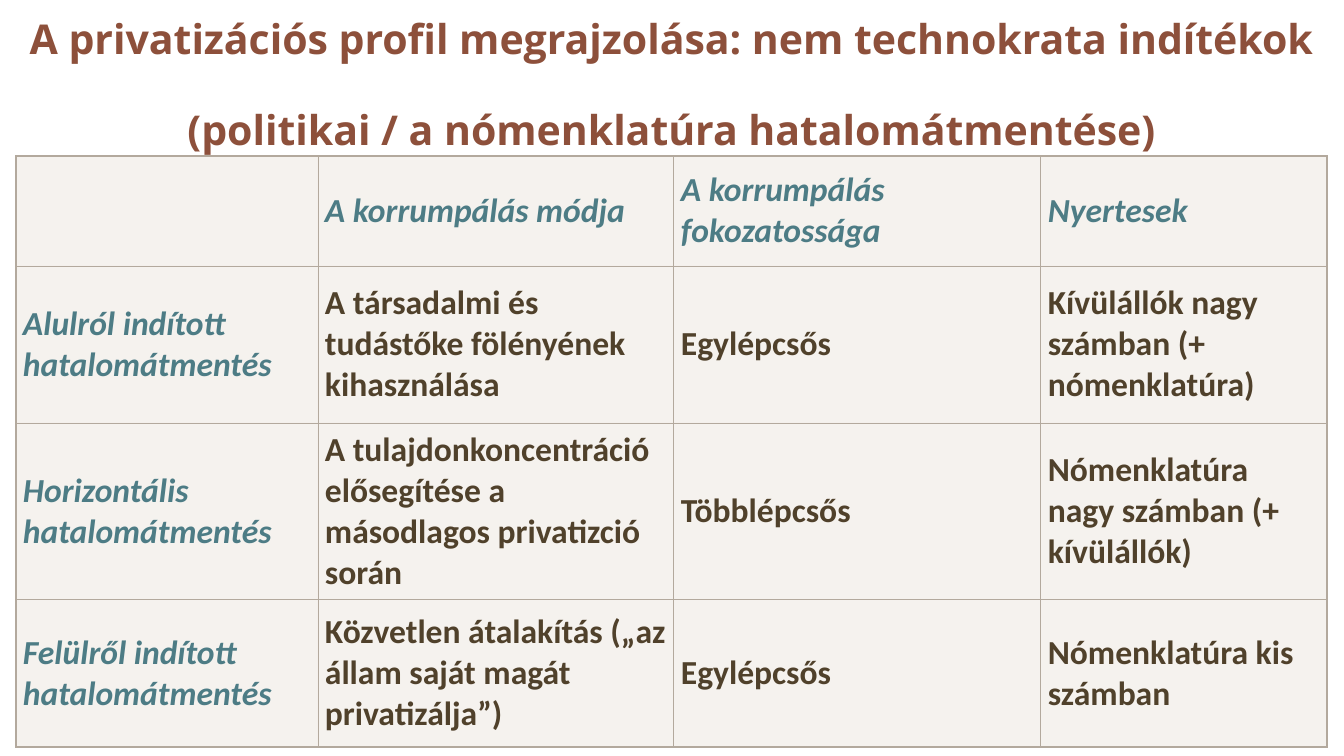
"""Build the slide on privatization motives: a two-line title over a bordered table."""
from lxml import etree
from pptx import Presentation
from pptx.dml.color import RGBColor
from pptx.enum.text import MSO_ANCHOR, PP_ALIGN
from pptx.oxml.ns import qn
from pptx.util import Pt

MIDDLE = MSO_ANCHOR.MIDDLE
CENTER = PP_ALIGN.CENTER

TITLE = [
    "A privatizációs profil megrajzolása: nem technokrata indítékok",
    "(politikai / a nómenklatúra hatalomátmentése)",
]
ROWS = [
    ["", "A korrumpálás módja", "A korrumpálás fokozatossága", "Nyertesek"],
    ["Alulról indított hatalomátmentés",
     "A társadalmi és tudástőke fölényének kihasználása",
     "Egylépcsős", "Kívülállók nagy számban (+ nómenklatúra)"],
    ["Horizontális hatalomátmentés",
     "A tulajdonkoncentráció elősegítése a másodlagos privatizció során",
     "Többlépcsős", "Nómenklatúra nagy számban (+ kívülállók)"],
    ["Felülről indított hatalomátmentés",
     "Közvetlen átalakítás („az állam saját magát privatizálja”)",
     "Egylépcsős", "Nómenklatúra kis számban"],
]
COLORS = {"title": "8D503B", "heading": "4D7C85", "body": "50412B",
          "fill": "EFEAE4", "border": "B3A99D"}
COLUMN_WIDTHS = [302, 356, 367, 286]
ROW_HEIGHTS = [110, 157, 177, 147]
LEFT, TABLE_TOP, TITLE_HEIGHT, INSET = 16, 156, 167, 7
FILL_OPACITY = 60
INNER_LINE, OUTER_LINE = Pt(0.5), Pt(1)


def px(length):
    return round(length * 914400 / 134.4)


def style_font(paragraph, name, size, color, italic=False):
    font = paragraph.font
    font.name, font.size = name, Pt(size)
    font.bold, font.italic = True, italic
    font.color.rgb = RGBColor.from_string(COLORS[color])


def add_solid_fill(parent, color):
    solid = etree.SubElement(parent, qn("a:solidFill"))
    return etree.SubElement(solid, qn("a:srgbClr"), val=COLORS[color])


def decorate_cell(cell, row, column):
    properties = cell._tc.get_or_add_tcPr()
    outer_edges = {"lnL": column == 0, "lnR": column == len(COLUMN_WIDTHS) - 1,
                   "lnT": row == 0, "lnB": row == len(ROW_HEIGHTS) - 1}
    for edge, is_outer in outer_edges.items():
        width = OUTER_LINE if is_outer else INNER_LINE
        line = etree.SubElement(properties, qn(f"a:{edge}"), w=str(int(width)))
        add_solid_fill(line, "border")
    tint = add_solid_fill(properties, "fill")
    etree.SubElement(tint, qn("a:alpha"), val=str(FILL_OPACITY * 1000))


def add_title(slide):
    box = slide.shapes.add_textbox(px(LEFT), 0, px(sum(COLUMN_WIDTHS)), px(TITLE_HEIGHT))
    frame = box.text_frame
    frame.word_wrap = True
    frame.vertical_anchor = MIDDLE
    frame.margin_left = frame.margin_right = frame.margin_top = frame.margin_bottom = 0
    frame.text = "\n".join(TITLE)
    for paragraph in frame.paragraphs:
        paragraph.alignment = CENTER
        style_font(paragraph, "Open Sans", 22, "title")
    frame.paragraphs[-1].space_before = Pt(22.5)


def add_motive_table(slide):
    table = slide.shapes.add_table(
        len(ROW_HEIGHTS), len(COLUMN_WIDTHS), px(LEFT), px(TABLE_TOP),
        px(sum(COLUMN_WIDTHS)), px(sum(ROW_HEIGHTS))).table
    table.first_row = table.horz_banding = False
    for column, width in zip(table.columns, COLUMN_WIDTHS):
        column.width = px(width)
    for row, height in zip(table.rows, ROW_HEIGHTS):
        row.height = px(height)
    for r, texts in enumerate(ROWS):
        for c, text in enumerate(texts):
            cell = table.cell(r, c)
            cell.text = text
            cell.vertical_anchor = MIDDLE
            cell.margin_left = cell.margin_right = px(INSET)
            cell.margin_top = cell.margin_bottom = px(INSET)
            heading = r == 0 or c == 0
            style_font(cell.text_frame.paragraphs[0], "Calibri", 18,
                       "heading" if heading else "body", heading)
            decorate_cell(cell, r, c)


def main():
    presentation = Presentation()
    presentation.slide_width, presentation.slide_height = px(1344), px(756)
    slide = presentation.slides.add_slide(presentation.slide_layouts[6])
    add_title(slide)
    add_motive_table(slide)
    presentation.save("out.pptx")


if __name__ == "__main__":
    main()
